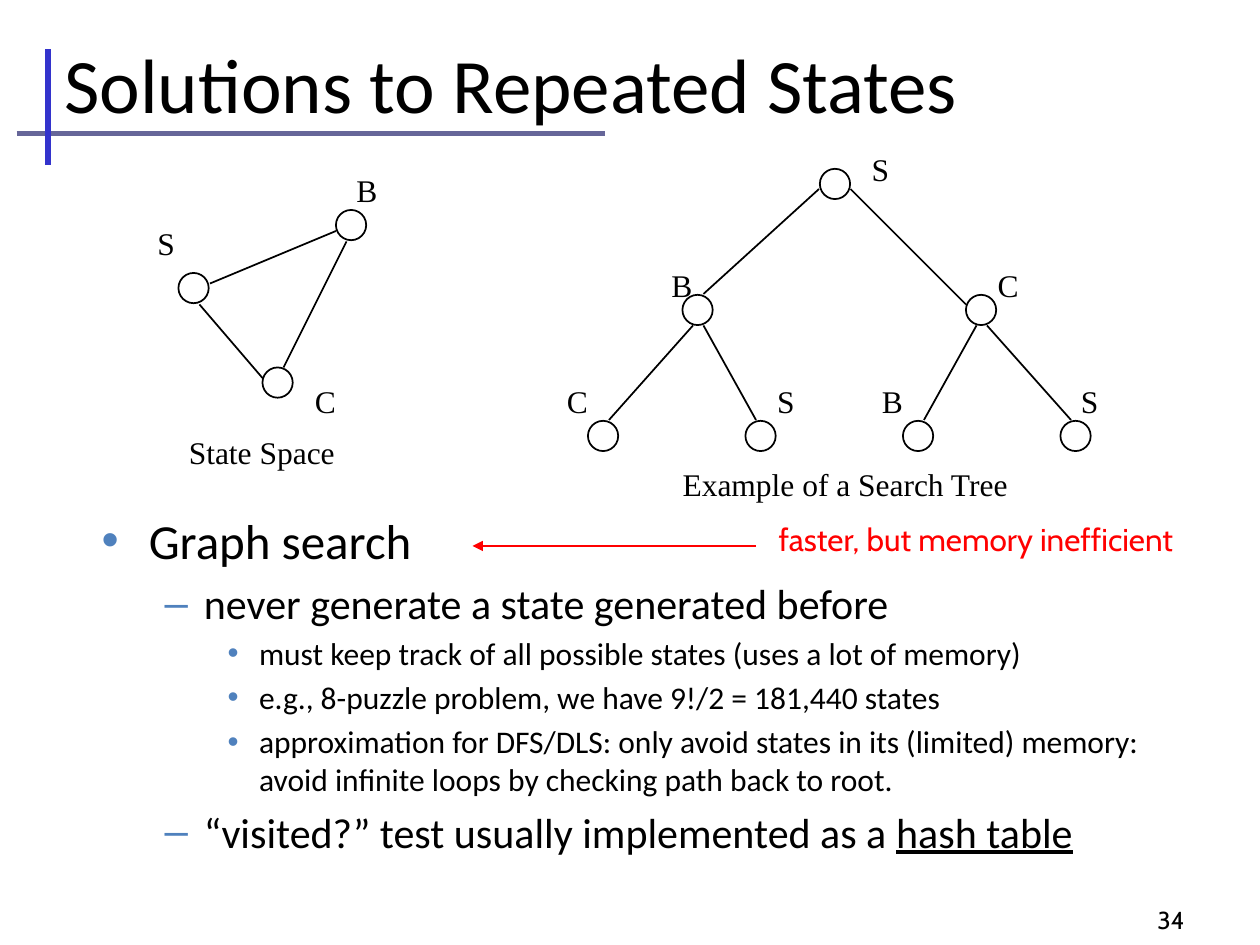
from lxml.etree import SubElement
from pptx import Presentation
from pptx.dml.color import RGBColor
from pptx.enum.shapes import MSO_CONNECTOR, MSO_SHAPE
from pptx.enum.text import MSO_ANCHOR, MSO_AUTO_SIZE, PP_ALIGN
from pptx.oxml.ns import qn
from pptx.util import Pt

BLACK = RGBColor(0x00, 0x00, 0x00)
RED = RGBColor(0xFF, 0x00, 0x00)
BLUE = RGBColor(0x33, 0x33, 0xCC)
SLATE = RGBColor(0x66, 0x66, 0x99)
BULLET = RGBColor(0x4F, 0x81, 0xBD)

presentation = Presentation()
presentation.slide_width, presentation.slide_height = Pt(720), Pt(540)
slide = presentation.slides.add_slide(presentation.slide_layouts[5])


def add_text(text, left, top, width, height=28.8, shape=None, font="Times New Roman",
             size=18, color=BLACK, align=PP_ALIGN.LEFT, anchor=MSO_ANCHOR.TOP, wrap=False):
    """Write one line of text in the given shape, or in a new text box."""
    shape = shape or slide.shapes.add_textbox(0, 0, 0, 0)
    shape.left, shape.top, shape.width, shape.height = Pt(left), Pt(top), Pt(width), Pt(height)
    frame = shape.text_frame
    frame.word_wrap = wrap
    frame.auto_size = MSO_AUTO_SIZE.NONE if wrap else MSO_AUTO_SIZE.SHAPE_TO_FIT_TEXT
    frame.vertical_anchor = anchor
    paragraph = frame.paragraphs[0]
    paragraph.alignment = align
    run = paragraph.add_run()
    run.text = text
    run.font.name, run.font.size, run.font.color.rgb = font, Pt(size), color


def add_line(start_x, start_y, end_x, end_y, color=BLACK, width=1):
    connector = slide.shapes.add_connector(
        MSO_CONNECTOR.STRAIGHT, Pt(start_x), Pt(start_y), Pt(end_x), Pt(end_y))
    connector.line.color.rgb, connector.line.width = color, Pt(width)
    SubElement(connector.element.spPr, qn("a:effectLst"))
    return connector


# Title with its crossed rules
add_line(9.5, 76.3, 345.5, 76.3, SLATE, 3)
add_line(27.4, 94.3, 27.4, 28, BLUE, 3)
add_text("Solutions to Repeated States", 29.5, 7.2, 642.2, 80.6, shape=slide.shapes.title,
         font="Calibri", size=44, anchor=MSO_ANCHOR.MIDDLE, wrap=True)

# Outline: level, then pieces of text with their underline
outline = [
    (0, [("Graph search", False)]),
    (1, [("never generate a state generated before", False)]),
    (2, [("must keep track of all possible states (uses a lot of memory)", False)]),
    (2, [("e.g., 8-puzzle problem, we have 9!/2 = 181,440 states", False)]),
    (2, [("approximation for DFS/DLS: only avoid states in its (limited) memory: "
          "avoid infinite loops by checking path back to root.", False)]),
    (1, [("“visited?” test usually implemented as a ", False), ("hash table", True)]),
]
# Size, left margin, hanging indent and bullet of each level
levels = [(28, 27, 27, "•"), (24, 58.5, 22.5, "–"), (18, 90, 18, "•")]
body = slide.shapes.add_textbox(Pt(51), Pt(288), Pt(618), Pt(222)).text_frame
body.word_wrap = True
for index, (level, pieces) in enumerate(outline):
    size, margin, hanging, bullet = levels[level]
    paragraph = body.add_paragraph() if index else body.paragraphs[0]
    paragraph.level = level
    paragraph.space_before = Pt(0.2 * size)
    properties = paragraph._p.get_or_add_pPr()
    properties.set("marL", str(Pt(margin)))
    properties.set("indent", str(-Pt(hanging)))
    bullet_color = SubElement(properties, qn("a:buClr"))
    SubElement(bullet_color, qn("a:srgbClr"), val=str(BULLET))
    SubElement(properties, qn("a:buFont"), typeface="Arial")
    SubElement(properties, qn("a:buChar"), char=bullet)
    for text, underlined in pieces:
        run = paragraph.add_run()
        run.text = text
        run.font.name, run.font.size, run.font.color.rgb = "Calibri", Pt(size), BLACK
        if underlined:
            run.font.underline = True

add_text("34", 516, 511.2, 168, font="Cabin", size=14, align=PP_ALIGN.RIGHT,
         anchor=MSO_ANCHOR.MIDDLE, wrap=True)

# State space and search tree: name, node corner, label corner
nodes = [
    ("S", 102, 156, 82.8, 124.6),
    ("C", 150, 210, 172.8, 214.6),
    ("B", 192, 120, 196.6, 94.3),
    ("S", 468.5, 96.5, 491, 82.1),
    ("B", 390, 168.5, 376.6, 148.3),
    ("C", 552, 168.5, 563, 148.3),
    ("C", 336, 240.5, 316.8, 214.6),
    ("S", 426, 240.5, 437, 214.6),
    ("B", 516, 240.5, 496.8, 214.6),
    ("S", 606, 240.5, 610.6, 214.6),
]
for name, left, top, label_left, label_top in nodes:
    node = slide.shapes.add_shape(MSO_SHAPE.OVAL, Pt(left), Pt(top), Pt(17.3), Pt(17.3))
    node.shadow.inherit = False
    node.fill.background()
    node.line.color.rgb, node.line.width = BLACK, Pt(1)
    add_text(name, label_left, label_top, 24.5 if name == "S" else 26)

edges = [
    (120, 162, 192, 132), (198, 138, 162, 210), (114, 174, 150, 216),
    (468, 108, 402, 168), (486, 108, 552, 174),
    (396, 186, 348, 240), (402, 186, 432, 240),
    (558, 186, 528, 240), (564, 186, 612, 240),
]
for edge in edges:
    add_line(*edge)

add_text("State Space", 100.8, 244.1, 98)
add_text("Example of a Search Tree", 383, 262.1, 201.6)

# Remark on graph search
arrow = add_line(432, 312, 270, 312, RED, 0.75)
SubElement(arrow.line._get_or_add_ln(), qn("a:tailEnd"), type="triangle")
add_text("faster, but memory inefficient", 437.8, 293.8, 249.8, font="Cabin", color=RED)

presentation.save("out.pptx")
